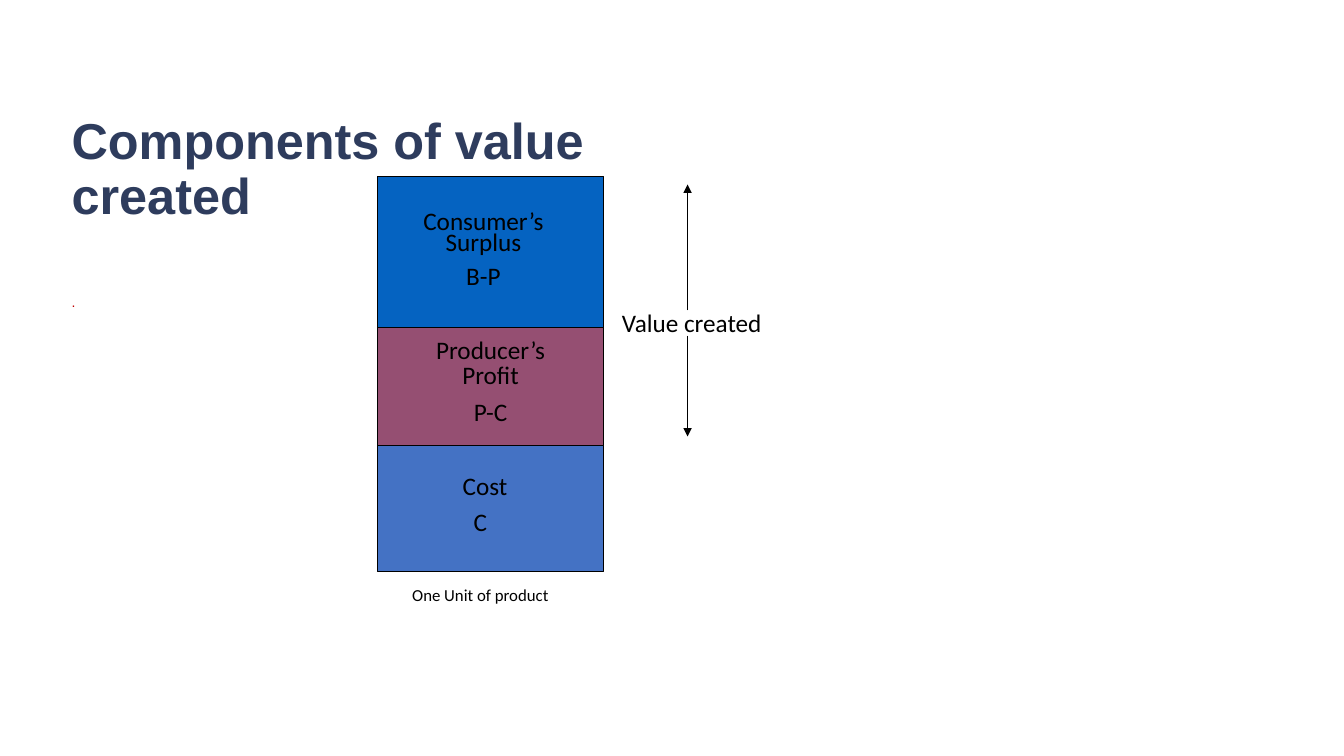
from dataclasses import dataclass

from lxml.etree import SubElement
from pptx import Presentation
from pptx.dml.color import RGBColor
from pptx.enum.shapes import MSO_CONNECTOR, MSO_SHAPE
from pptx.enum.text import MSO_ANCHOR, MSO_AUTO_SIZE, PP_ALIGN
from pptx.oxml.ns import qn
from pptx.shapes.placeholder import SlidePlaceholder
from pptx.slide import Slide
from pptx.text.text import _Paragraph as Paragraph
from pptx.util import Emu, Pt

EMU_PER_PX = 9144
BLACK = RGBColor(0x00, 0x00, 0x00)
NAVY = RGBColor(0x2E, 0x3C, 0x5D)
RED = RGBColor(0xC0, 0x00, 0x00)
BLUE = RGBColor(0x05, 0x63, 0xC1)
PLUM = RGBColor(0x95, 0x4F, 0x72)
SKY = RGBColor(0x44, 0x72, 0xC4)

STACK_LEFT, STACK_TOP, STACK_WIDTH = 374, 175, 225
ARROW_X = 682


@dataclass(frozen=True)
class Box:
    left: int
    top: int
    width: int
    height: int


@dataclass(frozen=True)
class Segment:
    height: int
    color: RGBColor


@dataclass(frozen=True)
class Label:
    box: Box
    lines: tuple[str, ...]
    size: int = 18
    spacing: float = 1.0
    align: PP_ALIGN = PP_ALIGN.LEFT
    last_indent: int = 0


@dataclass(frozen=True)
class Arrow:
    start: int
    end: int


SEGMENTS = (Segment(150, BLUE), Segment(117, PLUM), Segment(125, SKY))
LABELS = (
    Label(Box(388, 207, 183, 90), ("Consumer’s Surplus", "B-P"), spacing=0.7, align=PP_ALIGN.CENTER),
    Label(Box(399, 333, 175, 99), ("Producer’s Profit", "P-C"), spacing=0.8, align=PP_ALIGN.CENTER),
    Label(Box(449, 467, 133, 74), ("Cost", "C"), spacing=0.8, last_indent=11),
    Label(Box(607, 300, 192, 40), ("Value created",)),
    Label(Box(399, 575, 217, 30), ("One Unit of product",), size=12),
)
ARROWS = (Arrow(308, 183), Arrow(333, 433))


def px(length: int) -> Emu:
    return Emu(length * EMU_PER_PX)


def place(box: Box) -> tuple[Emu, Emu, Emu, Emu]:
    return px(box.left), px(box.top), px(box.width), px(box.height)


def format_runs(paragraph: Paragraph, size: int, font_name: str, color: RGBColor, bold: bool = False) -> None:
    for run in paragraph.runs:
        run.font.size = Pt(size)
        run.font.name = font_name
        run.font.bold = bold
        run.font.color.rgb = color


def indent(paragraph: Paragraph, margin: int, first_line: int = 0) -> None:
    properties = paragraph._p.get_or_add_pPr()
    properties.set("marL", str(px(margin)))
    properties.set("indent", str(px(first_line)))


def fill_placeholder(placeholder: SlidePlaceholder, box: Box, text: str) -> Paragraph:
    placeholder.left, placeholder.top, placeholder.width, placeholder.height = place(box)
    frame = placeholder.text_frame
    frame.text = text
    frame.auto_size = MSO_AUTO_SIZE.NONE
    paragraph = frame.paragraphs[0]
    paragraph.alignment = PP_ALIGN.LEFT
    paragraph.line_spacing = 0.9
    return paragraph


def add_headings(slide: Slide) -> None:
    title = slide.shapes.title
    heading = fill_placeholder(title, Box(61, 144, 537, 51), "Components of value created")
    title.text_frame.vertical_anchor = MSO_ANCHOR.MIDDLE
    format_runs(heading, 36, "Arial", NAVY, bold=True)

    point = fill_placeholder(slide.placeholders[1], Box(61, 288, 537, 44), ".")
    point.space_before = Pt(10)
    indent(point, 25, -25)
    SubElement(point._p.get_or_add_pPr(), qn("a:buNone"))
    format_runs(point, 10, "Arial", RED)


def add_stack(slide: Slide) -> None:
    top = STACK_TOP
    for segment in SEGMENTS:
        box = Box(STACK_LEFT, top, STACK_WIDTH, segment.height)
        shape = slide.shapes.add_shape(MSO_SHAPE.RECTANGLE, *place(box))
        shape.shadow.inherit = False
        shape.fill.solid()
        shape.fill.fore_color.rgb = segment.color
        shape.line.color.rgb = BLACK
        shape.line.width = Pt(0.75)
        top += segment.height


def add_label(slide: Slide, label: Label) -> None:
    frame = slide.shapes.add_textbox(*place(label.box)).text_frame
    frame.text = "\n".join(label.lines)
    frame.word_wrap = True
    frame.auto_size = MSO_AUTO_SIZE.SHAPE_TO_FIT_TEXT
    for paragraph in frame.paragraphs:
        paragraph.alignment = label.align
        paragraph.line_spacing = label.spacing
        paragraph.space_before = Pt(label.size / 2)
        format_runs(paragraph, label.size, "Calibri", BLACK)
    if label.last_indent:
        indent(frame.paragraphs[-1], label.last_indent)


def add_arrow(slide: Slide, arrow: Arrow) -> None:
    connector = slide.shapes.add_connector(
        MSO_CONNECTOR.STRAIGHT, px(ARROW_X), px(arrow.start), px(ARROW_X), px(arrow.end)
    )
    connector.line.color.rgb = BLACK
    connector.line.width = Pt(0.75)
    SubElement(connector.line._get_or_add_ln(), qn("a:tailEnd"), type="triangle")
    SubElement(connector._element.spPr, qn("a:effectLst"))


def main() -> None:
    presentation = Presentation()
    presentation.slide_width, presentation.slide_height = px(1333), px(750)
    slide = presentation.slides.add_slide(presentation.slide_layouts[1])
    add_headings(slide)
    add_stack(slide)
    *stack_labels, caption = LABELS
    for label in stack_labels:
        add_label(slide, label)
    for arrow in ARROWS:
        add_arrow(slide, arrow)
    add_label(slide, caption)
    presentation.save("out.pptx")


if __name__ == "__main__":
    main()
